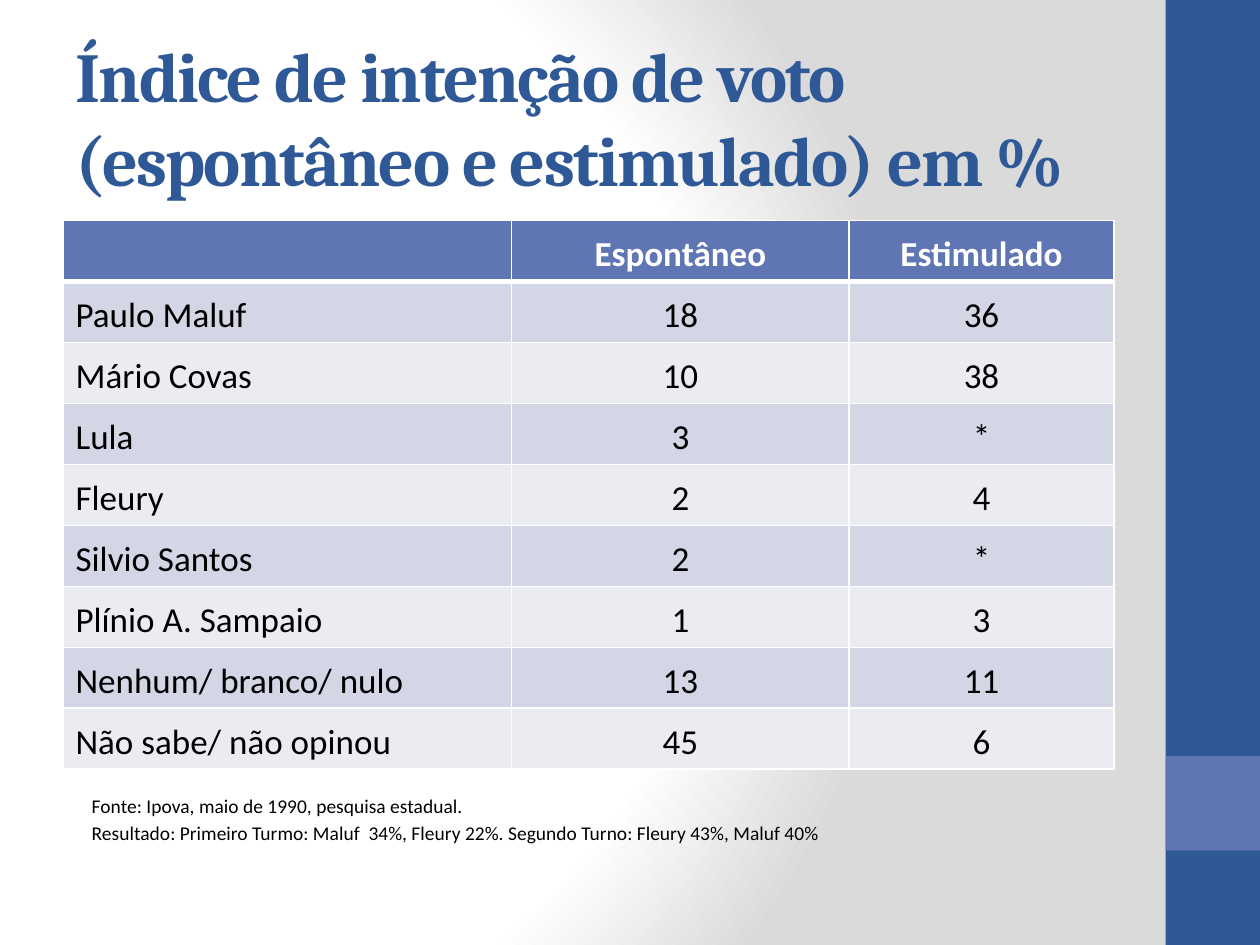
from lxml import etree
from pptx import Presentation
from pptx.dml.color import RGBColor
from pptx.enum.shapes import MSO_SHAPE
from pptx.enum.text import MSO_ANCHOR, PP_ALIGN
from pptx.oxml.ns import qn
from pptx.util import Inches, Pt

RECTANGLE = MSO_SHAPE.RECTANGLE
MIDDLE = MSO_ANCHOR.MIDDLE
CENTER, JUSTIFY = PP_ALIGN.CENTER, PP_ALIGN.JUSTIFY

NAVY, INDIGO, WHITE, BLACK = "2F5897", "6076B4", "FFFFFF", "000000"
BANDS = ["D2D6E5", "EAECF2"]

HEADINGS = ["", "Espontâneo", "Estimulado"]
POLL = [
    ["Paulo Maluf", "18", "36"],
    ["Mário Covas", "10", "38"],
    ["Lula", "3", "*"],
    ["Fleury", "2", "4"],
    ["Silvio Santos", "2", "*"],
    ["Plínio A. Sampaio", "1", "3"],
    ["Nenhum/ branco/ nulo", "13", "11"],
    ["Não sabe/ não opinou", "45", "6"],
]
NOTES = [
    "Fonte: Ipova, maio de 1990, pesquisa estadual.",
    "Resultado: Primeiro Turmo: Maluf  34%, Fleury 22%. Segundo Turno: Fleury 43%, Maluf 40%",
]


def rgb(value):
    return RGBColor.from_string(value)


def grid(*cells):
    """Grid of 40 columns by 30 rows, each a quarter inch."""
    return [Inches(cell / 4) for cell in cells]


class PollSlide:
    body_font, title_font = "Calibri", "Cambria"

    def __init__(self, deck):
        self.slide = deck.slides.add_slide(deck.slide_layouts[6])
        self.shapes = self.slide.shapes

    def background(self, inner, outer):
        fill = self.slide.background.fill
        fill.gradient()
        gradient = fill._fill._gradFill
        stops = gradient.find(qn("a:gsLst"))
        for old in list(stops):
            stops.remove(old)
        for position, color in [(0, inner), (75, inner), (100, outer)]:
            stop = etree.SubElement(stops, qn("a:gs"), pos=str(position * 1000))
            etree.SubElement(stop, qn("a:srgbClr"), val=color)
        gradient.remove(gradient.find(qn("a:lin")))
        circle = etree.SubElement(gradient, qn("a:path"), path="circle")
        etree.SubElement(circle, qn("a:fillToRect"),
                         l="20000", t="50000", r="100000", b="50000")

    def block(self, box, color):
        block = self.shapes.add_shape(RECTANGLE, *grid(*box))
        block.shadow.inherit = False
        block.fill.solid()
        block.fill.fore_color.rgb = rgb(color)
        block.line.fill.background()

    def run(self, paragraph, text, size, color, bold=False, font=None):
        run = paragraph.add_run()
        run.text = text
        run.font.name = font or self.body_font
        run.font.size = Pt(size)
        run.font.bold = bold
        run.font.color.rgb = rgb(color)
        return run

    def text_frame(self, box):
        frame = self.shapes.add_textbox(*grid(*box)).text_frame
        frame.word_wrap = True
        return frame

    def title(self, box, text):
        frame = self.text_frame(box)
        frame.vertical_anchor = MIDDLE
        run = self.run(frame.paragraphs[0], text, 40, NAVY, True, self.title_font)
        run.font._element.set("spc", "-100")

    def notes(self, box, lines):
        frame = self.text_frame(box)
        for index, line in enumerate(lines):
            paragraph = frame.add_paragraph() if index else frame.paragraphs[0]
            paragraph.space_before = Pt(2.2)
            paragraph._p.get_or_add_pPr().set("marL", str(Inches(0.12)))
            self.run(paragraph, line, 11.1, BLACK)

    def borders(self, cell, top=1, bottom=1):
        properties = cell._tc.get_or_add_tcPr()
        for side, width in [("L", 1), ("R", 1), ("T", top), ("B", bottom)]:
            line = etree.SubElement(properties, qn(f"a:ln{side}"), w=str(Pt(width)))
            fill = etree.SubElement(line, qn("a:solidFill"))
            etree.SubElement(fill, qn("a:srgbClr"), val=WHITE)

    def table(self, box, columns, row_height, rows):
        table = self.shapes.add_table(len(rows), len(columns), *grid(*box)).table
        for column, width in zip(table.columns, columns):
            column.width = Inches(width)
        for r, values in enumerate(rows):
            table.rows[r].height = Inches(row_height)
            header = r == 0
            for c, value in enumerate(values):
                cell = table.cell(r, c)
                # The rule under the header is heavier
                self.borders(cell, top=3 if r == 1 else 1, bottom=3 if header else 1)
                cell.fill.solid()
                cell.fill.fore_color.rgb = rgb(INDIGO if header else BANDS[(r - 1) % 2])
                if value:
                    paragraph = cell.text_frame.paragraphs[0]
                    paragraph.alignment = CENTER if c else JUSTIFY
                    paragraph.line_spacing = 1.15
                    paragraph.space_after = Pt(10)
                    self.run(paragraph, value, 20, WHITE if header else BLACK, header)


def main():
    deck = Presentation()
    deck.slide_width, deck.slide_height = grid(40, 30)
    poll = PollSlide(deck)

    # Background and side bar
    poll.background(WHITE, "DADADA")
    poll.block((37, 0, 3, 30), NAVY)
    poll.block((37, 24, 3, 3), INDIGO)

    # Title, poll table and source notes
    poll.title((2, 1.2, 33.32, 5), "Índice de intenção de voto (espontâneo e estimulado) em %")
    poll.notes((2.04, 25, 28.68, 1.96), NOTES)
    poll.table((2, 7, 33.32, 17.4), [3.56, 2.68, 2.1], 0.41, [HEADINGS] + POLL)

    deck.save("out.pptx")


if __name__ == "__main__":
    main()
